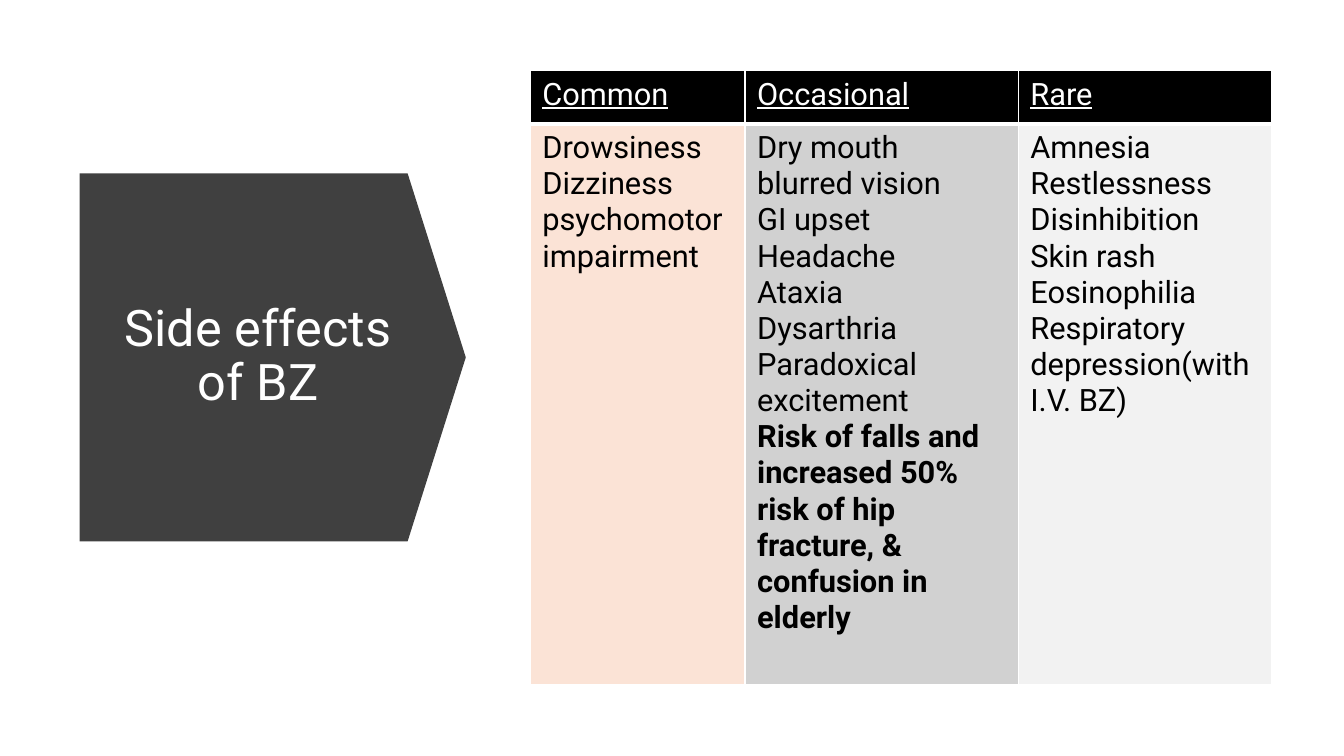
"""Build a slide listing the side effects of BZ by how often they occur."""
import dataclasses

import lxml.etree
import pptx
import pptx.dml.color
import pptx.enum.shapes
import pptx.enum.text
import pptx.oxml.ns
import pptx.util

Inches = pptx.util.Inches
Pt = pptx.util.Pt
qn = pptx.oxml.ns.qn


@dataclasses.dataclass(frozen=True)
class Theme:
    font: str = "Roboto"
    title_size: int = 36
    table_size: int = 22
    white: str = "FFFFFF"
    black: str = "000000"
    arrow: str = "404040"
    thin_border: int = 1
    thick_border: int = 3


@dataclasses.dataclass(frozen=True)
class Frequency:
    heading: str
    width: float
    fill: str
    effects: tuple[str, ...]
    warning: str = ""


THEME = Theme()
ROW_HEIGHTS = (0.53, 5.56)
FREQUENCIES = (
    Frequency("Common", 2.13, "FBE3D6", ("Drowsiness", "Dizziness", "psychomotor impairment")),
    Frequency(
        "Occasional", 2.71, "D1D1D1",
        ("Dry mouth", "blurred vision", "GI upset", "Headache", "Ataxia", "Dysarthria",
         "Paradoxical excitement"),
        "Risk of falls and increased 50% risk of hip fracture, & confusion in elderly",
    ),
    Frequency(
        "Rare", 2.51, "F2F2F2",
        ("Amnesia", "Restlessness", "Disinhibition", "Skin rash", "Eosinophilia",
         "Respiratory depression(with I.V. BZ)"),
    ),
)


def rgb(value: str) -> pptx.dml.color.RGBColor:
    return pptx.dml.color.RGBColor.from_string(value)


def add_span(para, text: str, size: int, color: str, bold: bool = False, underline: bool = False) -> None:
    span = para.add_run()
    span.text = text
    span.font.name = THEME.font
    span.font.size = Pt(size)
    span.font.color.rgb = rgb(color)
    span.font.bold = bold
    span.font.underline = underline


def draw_title(page) -> None:
    arrow = page.shapes.add_shape(
        pptx.enum.shapes.MSO_SHAPE.DOWN_ARROW, Inches(0.88), Inches(1.63), Inches(3.65), Inches(3.83)
    )
    arrow.rotation = 270
    arrow.adjustments[0] = 1
    arrow.adjustments[1] = 0.158
    arrow.shadow.inherit = False
    arrow.fill.solid()
    arrow.fill.fore_color.rgb = rgb(THEME.arrow)
    arrow.line.fill.background()

    box = page.shapes.add_textbox(Inches(1.12), Inches(2.15), Inches(2.88), Inches(2.79))
    box.text_frame.word_wrap = True
    box.text_frame.vertical_anchor = pptx.enum.text.MSO_ANCHOR.MIDDLE
    para = box.text_frame.paragraphs[0]
    para.alignment = pptx.enum.text.PP_ALIGN.CENTER
    para.line_spacing = 0.9
    add_span(para, "Side effects of BZ", THEME.title_size, THEME.white)


def style_cell(cell, fill: str, bottom_border: int) -> None:
    cell.margin_left = cell.margin_right = Inches(0.12)
    cell.margin_top = cell.margin_bottom = Inches(0.06)
    cell.fill.solid()
    cell.fill.fore_color.rgb = rgb(fill)
    properties = cell._tc.get_or_add_tcPr()
    thin = THEME.thin_border
    borders = (("a:lnL", thin), ("a:lnR", thin), ("a:lnT", thin), ("a:lnB", bottom_border))
    for position, (tag, width) in enumerate(borders):
        line = lxml.etree.Element(qn(tag), w=str(Pt(width)))
        solid = lxml.etree.SubElement(line, qn("a:solidFill"))
        lxml.etree.SubElement(solid, qn("a:srgbClr"), val=THEME.white)
        properties.insert(position, line)


def fill_column(table, index: int, frequency: Frequency) -> None:
    table.columns[index].width = Inches(frequency.width)
    header, body = table.cell(0, index), table.cell(1, index)
    style_cell(header, THEME.black, THEME.thick_border)
    style_cell(body, frequency.fill, THEME.thin_border)
    add_span(
        header.text_frame.paragraphs[0], frequency.heading, THEME.table_size, THEME.white, underline=True
    )
    entries = [(effect, False) for effect in frequency.effects]
    if frequency.warning:
        entries.append((frequency.warning, True))
    frame = body.text_frame
    for number, (text, bold) in enumerate(entries):
        para = frame.add_paragraph() if number else frame.paragraphs[0]
        add_span(para, text, THEME.table_size, THEME.black, bold=bold)


def draw_table(page) -> None:
    width = sum(frequency.width for frequency in FREQUENCIES)
    table = page.shapes.add_table(
        len(ROW_HEIGHTS), len(FREQUENCIES),
        Inches(5.26), Inches(0.7), Inches(width), Inches(sum(ROW_HEIGHTS)),
    ).table
    table.horz_banding = False
    for row, height in zip(table.rows, ROW_HEIGHTS):
        row.height = Inches(height)
    for index, frequency in enumerate(FREQUENCIES):
        fill_column(table, index, frequency)


def main() -> None:
    deck = pptx.Presentation()
    deck.slide_width = Inches(13.33)
    deck.slide_height = Inches(7.5)
    page = deck.slides.add_slide(deck.slide_layouts[6])
    draw_title(page)
    draw_table(page)
    deck.save("out.pptx")


if __name__ == "__main__":
    main()
